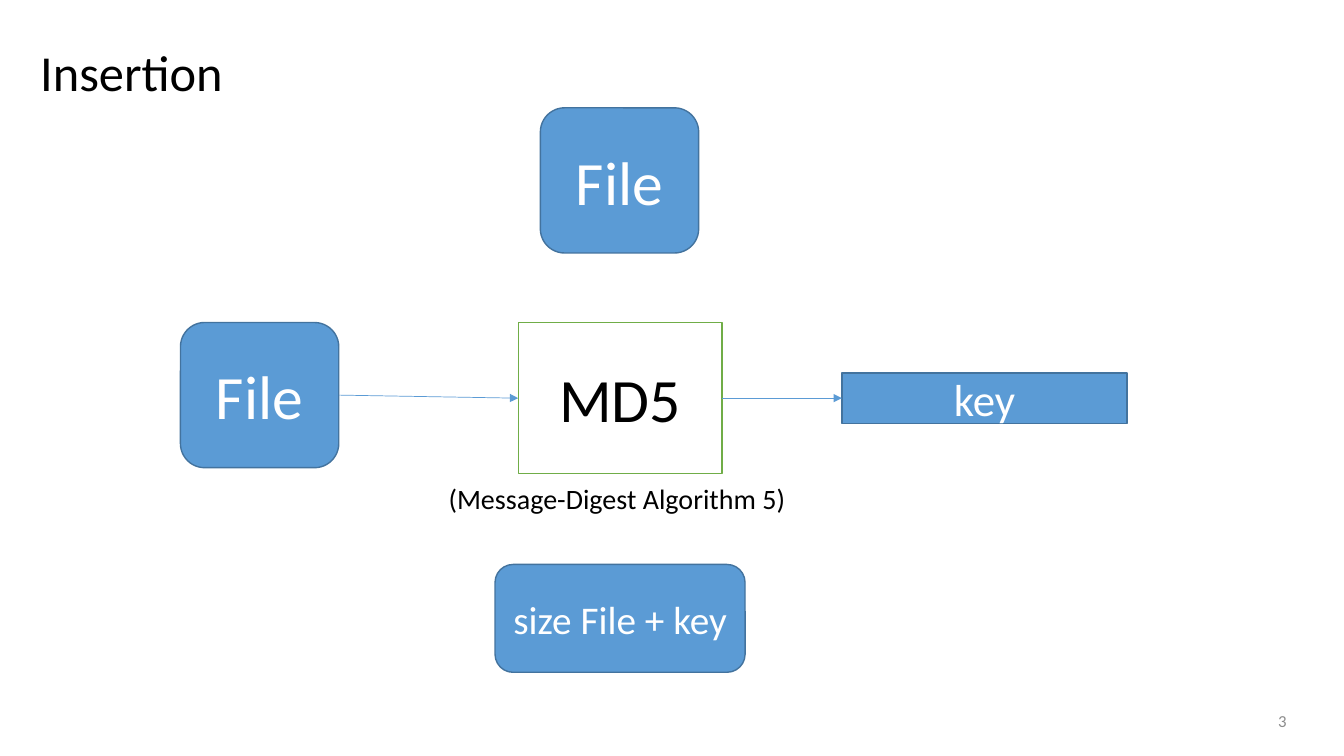
from dataclasses import dataclass

from lxml import etree
from pptx import Presentation
from pptx.dml.color import RGBColor
from pptx.enum.shapes import MSO_CONNECTOR, MSO_SHAPE
from pptx.enum.text import MSO_ANCHOR, PP_ALIGN
from pptx.oxml.ns import qn
from pptx.shapes.autoshape import Shape
from pptx.slide import Slide
from pptx.text.text import TextFrame
from pptx.util import Pt

PX = 9144  # EMU per px, 100 px to the inch
FONT = "Calibri"

WHITE = RGBColor(0xFF, 0xFF, 0xFF)
BLACK = RGBColor(0x00, 0x00, 0x00)
GRAY = RGBColor(0x8C, 0x8C, 0x8C)
BLUE = RGBColor(0x5B, 0x9B, 0xD5)
NAVY = RGBColor(0x43, 0x73, 0x9E)
GREEN = RGBColor(0x70, 0xAD, 0x47)

RECT = MSO_SHAPE.RECTANGLE
ROUND = MSO_SHAPE.ROUNDED_RECTANGLE
STRAIGHT = MSO_CONNECTOR.STRAIGHT
TOP, MIDDLE = MSO_ANCHOR.TOP, MSO_ANCHOR.MIDDLE
LEFT, CENTER, RIGHT = PP_ALIGN.LEFT, PP_ALIGN.CENTER, PP_ALIGN.RIGHT

# Connection sites of a box
LEFT_SITE, RIGHT_SITE = 1, 3


@dataclass(frozen=True)
class Box:
    text: str
    x: int
    y: int
    w: int
    h: int
    size: int
    kind: MSO_SHAPE = ROUND
    fill: RGBColor = BLUE
    line: RGBColor = NAVY
    color: RGBColor = WHITE


@dataclass(frozen=True)
class Label:
    text: str
    x: int
    y: int
    w: int
    h: int
    size: int
    color: RGBColor = BLACK
    align: PP_ALIGN = LEFT
    anchor: MSO_ANCHOR = MIDDLE
    bottom: int = 5


LABELS = [
    Label("Insertion", 30, 15, 1150, 145, 36, bottom=38),
    Label("3", 986, 695, 300, 40, 12, GRAY, RIGHT),
    Label("(Message-Digest Algorithm 5)", 435, 473, 361, 44, 20, anchor=TOP),
]

# The first box stands alone; the next three form the flow
STORED = Box("File", 536, 107, 157, 144, 44)
FLOW = [
    Box("File", 179, 320, 157, 144, 44),
    Box("MD5", 514, 320, 202, 150, 44, RECT, WHITE, GREEN, BLACK),
    Box("key", 835, 370, 283, 50, 32, RECT),
]
RESULT = Box("size File + key", 491, 560, 248, 107, 28)


def write(frame: TextFrame, text: str, size: int, color: RGBColor,
          align: PP_ALIGN, anchor: MSO_ANCHOR) -> None:
    frame.text = text
    frame.word_wrap = True
    frame.vertical_anchor = anchor
    line = frame.paragraphs[0]
    line.alignment = align
    font = line.runs[0].font
    font.name, font.size = FONT, Pt(size)
    font.color.rgb = color


def add_label(slide: Slide, label: Label) -> None:
    area = (label.x * PX, label.y * PX, label.w * PX, label.h * PX)
    frame = slide.shapes.add_textbox(*area).text_frame
    write(frame, label.text, label.size, label.color, label.align, label.anchor)
    frame.margin_bottom = label.bottom * PX


def add_box(slide: Slide, box: Box) -> Shape:
    area = (box.x * PX, box.y * PX, box.w * PX, box.h * PX)
    shape = slide.shapes.add_shape(box.kind, *area)
    shape.shadow.inherit = False
    shape.fill.solid()
    shape.fill.fore_color.rgb = box.fill
    shape.line.color.rgb = box.line
    shape.line.width = Pt(1)
    write(shape.text_frame, box.text, box.size, box.color, CENTER, MIDDLE)
    return shape


def add_arrow(slide: Slide, start: Shape, end: Shape) -> None:
    arrow = slide.shapes.add_connector(STRAIGHT, 0, 0, 0, 0)
    arrow.begin_connect(start, RIGHT_SITE)
    arrow.end_connect(end, LEFT_SITE)
    arrow.line.color.rgb = BLUE
    arrow.line.width = Pt(0.5)
    props = arrow._element.spPr
    etree.SubElement(props.find(qn("a:ln")), qn("a:tailEnd"), type="triangle")
    etree.SubElement(props, qn("a:effectLst"))


def main() -> None:
    deck = Presentation()
    deck.slide_width, deck.slide_height = 1333 * PX, 750 * PX
    slide = deck.slides.add_slide(deck.slide_layouts[6])

    # Title, page number and caption
    for label in LABELS:
        add_label(slide, label)

    # Boxes, with arrows along the flow
    add_box(slide, STORED)
    steps = [add_box(slide, box) for box in FLOW]
    for start, end in zip(steps, steps[1:]):
        add_arrow(slide, start, end)
    add_box(slide, RESULT)

    deck.save("out.pptx")


if __name__ == "__main__":
    main()
